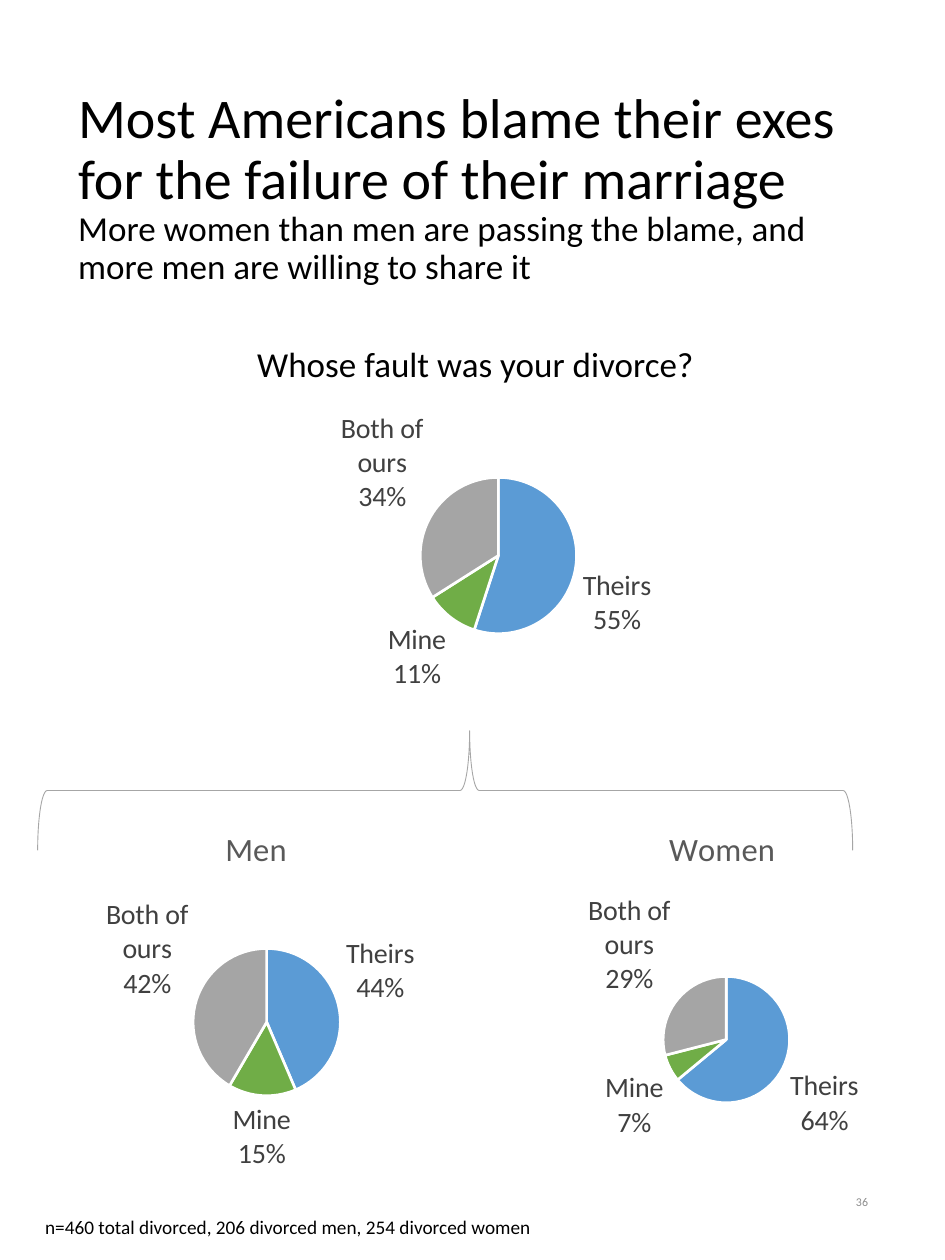
from lxml import etree
from pptx import Presentation
from pptx import util as u
from pptx.chart.data import CategoryChartData
from pptx.dml.color import RGBColor
from pptx.enum import chart as charts, shapes, text
from pptx.oxml.ns import qn

BLACK = RGBColor(0x00, 0x00, 0x00)
WHITE = RGBColor(0xFF, 0xFF, 0xFF)
LABEL = RGBColor(0x40, 0x40, 0x40)
HEADING = RGBColor(0x59, 0x59, 0x59)
PALE = RGBColor(0x8C, 0x8C, 0x8C)
BRACE = RGBColor(0xA6, 0xA6, 0xA6)
SLICES = [RGBColor(0x5B, 0x9B, 0xD5), RGBColor(0x70, 0xAD, 0x47), RGBColor(0xA5, 0xA5, 0xA5)]
FONT = "Calibri"

HEADLINE = [
    ("Most Americans blame their exes for the failure of their marriage", 32),
    ("More women than men are passing the blame, and more men are willing to share it", 20),
]
ANSWERS = ["Theirs", "Mine", "Both of ours"]
PIES = [
    {"title": None, "box": (4.95, 7.9, 9.27, 7.42), "values": (0.55, 0.11, 0.34),
     "pie": (0.38, 0.23, 0.34, 0.43)},
    {"title": "Women", "box": (9.12, 16.15, 10.62, 7.82), "values": (0.64, 0.07, 0.29),
     "pie": (0.4, 0.45, 0.24, 0.33), "title_at": (0.4, 0.05)},
    {"title": "Men", "box": (-0.25, 16.15, 10.62, 7.82), "values": (0.44, 0.15, 0.42),
     "pie": (0.39, 0.38, 0.28, 0.38), "title_at": (0.44, 0.05)},
]
TEXTS = [
    ("Whose fault was your divorce?", (3.25, 6.78, 12.67, 1.12), 20, BLACK,
     text.PP_ALIGN.CENTER, text.MSO_ANCHOR.TOP),
    ("36", (13.46, 23.55, 4.29, 1.35), 6.8, PALE,
     text.PP_ALIGN.RIGHT, text.MSO_ANCHOR.MIDDLE),
    ("n=460 total divorced, 206 divorced men, 254 divorced women", (0.66, 24.38, 17.73, 1.19),
     11, BLACK, text.PP_ALIGN.LEFT, text.MSO_ANCHOR.TOP),
]


def lengths(box):
    return [u.Cm(value) for value in box]


def style(font, size, color):
    font.name, font.size, font.bold = FONT, u.Pt(size), False
    font.color.rgb = color


def manual_layout(position, inner=False):
    layout = etree.Element(qn("c:layout"))
    manual = etree.SubElement(layout, qn("c:manualLayout"))
    settings = [("layoutTarget", "inner")] if inner else []
    settings += [("xMode", "edge"), ("yMode", "edge")]
    settings += zip("xywh", position)
    for name, value in settings:
        etree.SubElement(manual, qn(f"c:{name}")).set("val", str(value))
    return layout


def add_headline(slide):
    title = slide.shapes.title
    title.left, title.top, title.width, title.height = lengths((1.32, 1.35, 16.43, 4.9))
    frame = title.text_frame
    frame.auto_size = text.MSO_AUTO_SIZE.NONE
    frame.vertical_anchor = text.MSO_ANCHOR.MIDDLE
    paragraph = frame.paragraphs[0]
    paragraph.alignment, paragraph.line_spacing = text.PP_ALIGN.LEFT, 0.9
    for index, (wording, size) in enumerate(HEADLINE):
        if index:
            paragraph.add_line_break()
        run = paragraph.add_run()
        run.text = wording
        style(run.font, size, BLACK)


def add_text(slide, wording, box, size, color, alignment, anchor):
    frame = slide.shapes.add_textbox(*lengths(box)).text_frame
    frame.word_wrap, frame.vertical_anchor = True, anchor
    paragraph = frame.paragraphs[0]
    paragraph.text, paragraph.alignment = wording, alignment
    style(paragraph.font, size, color)


def add_pie(slide, pie):
    data = CategoryChartData(number_format="0%")
    data.categories = ANSWERS
    data.add_series("Series 1", pie["values"])
    chart = slide.shapes.add_chart(charts.XL_CHART_TYPE.PIE, *lengths(pie["box"]), data).chart
    style(chart.font, 10, BLACK)
    chart.has_legend = False
    chart.has_title = pie["title"] is not None
    if chart.has_title:
        paragraph = chart.chart_title.text_frame.paragraphs[0]
        paragraph.text = pie["title"]
        style(paragraph.font, 18.6, HEADING)
        title = chart.chart_title._element
        for layout in title.findall(qn("c:layout")):
            title.remove(layout)
        title.find(qn("c:tx")).addnext(manual_layout(pie["title_at"]))

    plot = chart.plots[0]
    plot.vary_by_categories = True
    for index, color in enumerate(SLICES):
        slice_format = plot.series[0].points[index].format
        slice_format.fill.solid()
        slice_format.fill.fore_color.rgb = color
        slice_format.line.color.rgb = WHITE
        slice_format.line.width = u.Pt(1.5)

    labels = plot.series[0].data_labels
    style(labels.font, 16, LABEL)
    labels.number_format, labels.number_format_is_linked = "0%", False
    labels.show_category_name = labels.show_value = True
    labels.show_percentage = False
    labels.position = charts.XL_LABEL_POSITION.OUTSIDE_END
    separator = etree.Element(qn("c:separator"))
    separator.text = "\n"
    labels._element.find(qn("c:showBubbleSize")).addnext(separator)

    plot_area = chart._chartSpace.chart.plotArea
    for layout in plot_area.findall(qn("c:layout")):
        plot_area.remove(layout)
    plot_area.insert(0, manual_layout(pie["pie"], inner=True))


def add_brace(slide):
    brace = slide.shapes.add_shape(
        shapes.MSO_SHAPE.RIGHT_BRACE, *lengths((7.77, 7.72, 2.41, 16.43)))
    brace.rotation = 270
    brace.adjustments[0], brace.adjustments[1] = 0.08, 0.53
    brace.shadow.inherit = False
    brace.fill.background()
    brace.line.color.rgb, brace.line.width = BRACE, u.Pt(0.5)


def main():
    presentation = Presentation()
    presentation.slide_width, presentation.slide_height = u.Cm(19.05), u.Cm(25.4)
    slide = presentation.slides.add_slide(presentation.slide_layouts[5])
    add_headline(slide)
    for pie in PIES:
        add_pie(slide, pie)
    for item in TEXTS:
        add_text(slide, *item)
    add_brace(slide)
    presentation.save("out.pptx")


if __name__ == "__main__":
    main()
